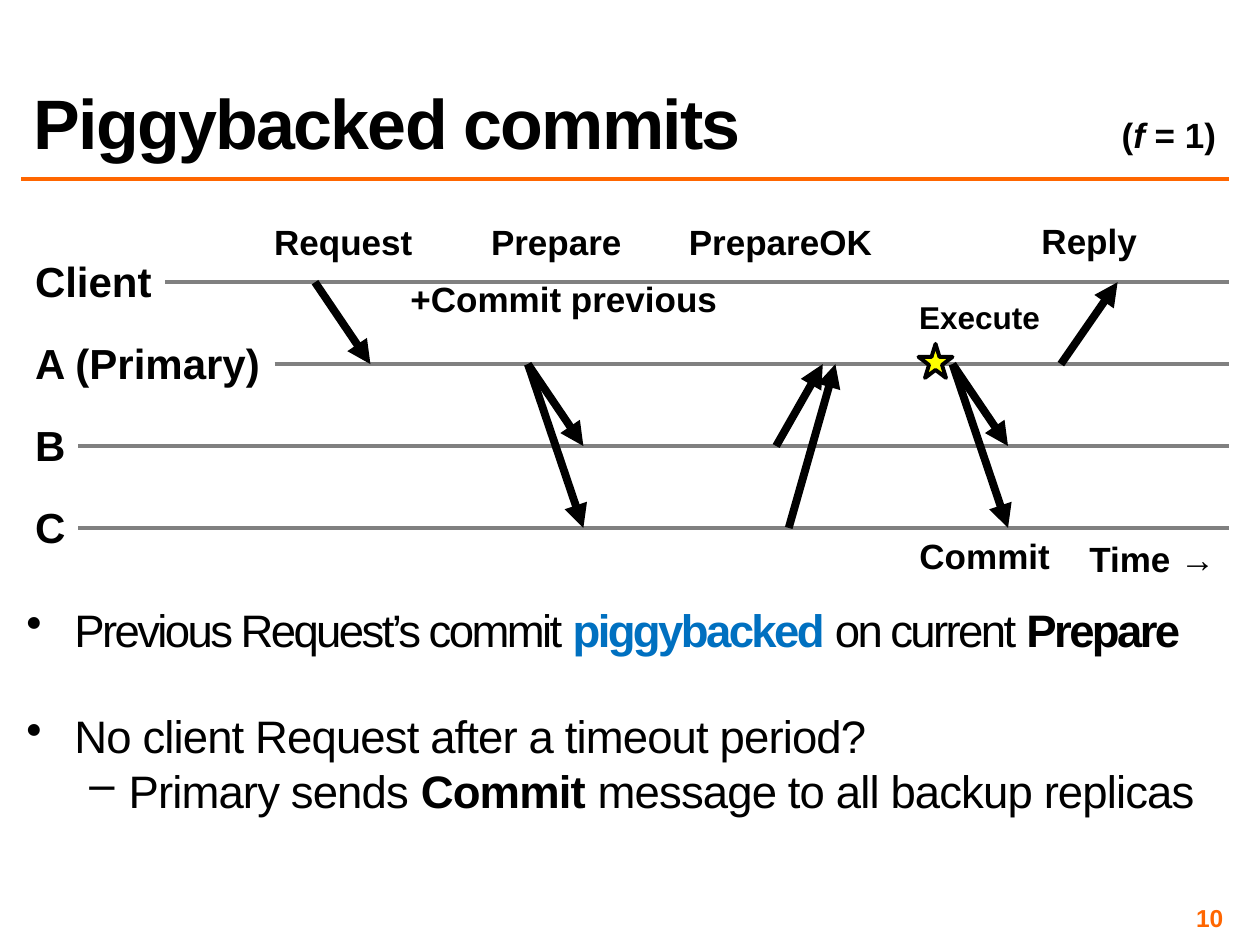
from collections import namedtuple

from pptx import Presentation
from pptx.dml.color import RGBColor
from pptx.enum.shapes import MSO_CONNECTOR as Connector, MSO_SHAPE as Shape
from pptx.enum.text import MSO_ANCHOR as Anchor, PP_ALIGN as Align
from pptx.oxml.xmlchemy import OxmlElement
from pptx.util import Inches, Pt

BLACK = RGBColor(0x00, 0x00, 0x00)
ORANGE = RGBColor(0xFF, 0x66, 0x00)
BLUE = RGBColor(0x00, 0x70, 0xC0)
GRAY = RGBColor(0x80, 0x80, 0x80)
YELLOW = RGBColor(0xFF, 0xFF, 0x00)

Box = namedtuple("Box", "left top width height")
LANE_GAP = 0.65
LANES = [("Client", 1.31), ("A (Primary)", 2.18), ("B", 0.62), ("C", 0.62)]
CLIENT, PRIMARY, B, C = range(4)
ARROWS = [
    (2.5, CLIENT, 2.94, PRIMARY),
    (4.19, PRIMARY, 4.63, B),
    (4.19, PRIMARY, 4.63, C),
    (6.26, C, 6.63, PRIMARY),
    (6.16, B, 6.53, PRIMARY),
    (8.42, PRIMARY, 8.87, CLIENT),
    (7.56, PRIMARY, 8, B),
    (7.56, PRIMARY, 8, C),
]
LABELS = [
    ("Request", Box(2.07, 1.7, 1.31, 0.44), 20),
    ("Prepare", Box(3.79, 1.7, 1.25, 0.44), 20),
    ("PrepareOK", Box(5.36, 1.7, 1.67, 0.44), 20),
    ("Reply", Box(8.16, 1.69, 0.97, 0.44), 20),
    ("+Commit previous", Box(3.15, 2.15, 2.65, 0.44), 20),
    ("Execute", Box(7.19, 2.32, 1.17, 0.4), 18),
    ("Commit", Box(7.19, 4.19, 1.25, 0.44), 20),
    ("Time →", Box(8.54, 4.22, 1.21, 0.44), 20),
]


def add_span(para, text, size=20, color=BLACK, bold=True, italic=False, spacing=0):
    span = para.add_run()
    span.text = text
    font = span.font
    font.name, font.size, font.bold, font.italic = "Arial", Pt(size), bold, italic
    font.color.rgb = color
    if spacing:
        span._r.get_or_add_rPr().set("spc", str(int(spacing * 100)))


def add_frame(page, box, anchor=Anchor.TOP, wrap=False, inset=None):
    frame = page.shapes.add_textbox(*map(Inches, box)).text_frame
    frame.word_wrap = wrap
    frame.vertical_anchor = anchor
    if inset is not None:
        frame.margin_left = frame.margin_right = Inches(inset)
        frame.margin_top = frame.margin_bottom = Inches(inset)
    return frame


def add_label(page, box, text, align=Align.LEFT, **style):
    para = add_frame(page, box).paragraphs[0]
    para.alignment = align
    add_span(para, text, **style)


def add_line(page, start, end, color, width, arrow=False):
    line = page.shapes.add_connector(Connector.STRAIGHT, *map(Inches, start + end))
    line.line.color.rgb = color
    line.line.width = Pt(width)
    if arrow:
        head = OxmlElement("a:tailEnd")
        head.set("type", "triangle")
        line.line._get_or_add_ln().append(head)
    line._element.spPr.append(OxmlElement("a:effectLst"))


def add_bullet(para, mark, indent, hang):
    properties = para._p.get_or_add_pPr()
    properties.set("marL", str(Inches(indent)))
    properties.set("indent", str(-Inches(hang)))
    bullet = OxmlElement("a:buChar")
    bullet.set("char", mark)
    properties.append(bullet)


def build_header(page, box):
    para = add_frame(page, box, Anchor.BOTTOM, wrap=True).paragraphs[0]
    para.line_spacing = 0.8
    add_span(para, "Piggybacked commits", size=40, spacing=-1)
    right = box.left + box.width
    note = add_frame(page, Box(right - 1.03, 0.85, 1.03, 0.44), wrap=True).paragraphs[0]
    note.alignment = Align.RIGHT
    add_span(note, "(")
    add_span(note, "f", italic=True)
    add_span(note, " = 1)")
    rule = box.top + box.height + 0.08
    add_line(page, (box.left, rule), (right, rule), ORANGE, 2)


def build_diagram(page, box):
    def lane_y(lane):
        return box.top + 0.54 + lane * LANE_GAP

    for lane, (name, start) in enumerate(LANES):
        y = lane_y(lane)
        add_label(page, Box(box.left, y - 0.26, start - box.left, 0.5), name, size=24)
        add_line(page, (start, y), (box.left + box.width, y), GRAY, 2.25)
    for x1, source, x2, target in ARROWS:
        add_line(page, (x1, lane_y(source)), (x2, lane_y(target)), BLACK, 4.5, arrow=True)
    for text, place, size in LABELS:
        add_label(page, place, text, Align.CENTER, size=size)

    star = page.shapes.add_shape(
        Shape.STAR_5_POINT, *map(Inches, (7.29, lane_y(PRIMARY) - 0.16, 0.27, 0.27)))
    star.shadow.inherit = False
    star.fill.solid()
    star.fill.fore_color.rgb = YELLOW
    star.line.color.rgb = BLACK
    star.line.width = Pt(2.25)


def build_body(page, box):
    plain, strong = {"bold": False}, {"bold": True}
    bullets = [
        ("•", 0.38, 0.38, 6, -1.5, [
            ("Previous Request’s commit ", plain),
            ("piggybacked ", {"color": BLUE}),
            ("on current ", plain),
            ("Prepare", strong)]),
        ("•", 0.38, 0.38, 36, -0.5, [
            ("No client Request after a timeout period?", plain)]),
        ("–", 0.81, 0.31, 6, -0.5, [
            ("Primary sends ", plain),
            ("Commit", strong),
            (" message to all backup replicas", plain)]),
    ]
    frame = add_frame(page, box, wrap=True, inset=0.04)
    for index, (mark, indent, hang, before, spacing, spans) in enumerate(bullets):
        para = frame.add_paragraph() if index else frame.paragraphs[0]
        para.line_spacing = 0.8
        para.space_before = Pt(before)
        add_bullet(para, mark, indent, hang)
        for text, style in spans:
            add_span(para, text, size=26, spacing=spacing, **style)


def build_page_number(page, box):
    para = add_frame(page, box, Anchor.MIDDLE, wrap=True, inset=0.04).paragraphs[0]
    para.alignment = Align.RIGHT
    add_span(para, "10", size=14, color=ORANGE)


def main():
    deck = Presentation()
    deck.slide_width, deck.slide_height = Inches(10), Inches(7.5)
    page = deck.slides.add_slide(deck.slide_layouts[6])
    build_header(page, Box(0.17, 0.17, 9.58, 1.17))
    build_body(page, Box(0.17, 4.82, 9.58, 2.26))
    build_page_number(page, Box(7.42, 7.17, 2.33, 0.23))
    build_diagram(page, Box(0.18, 1.7, 9.57, 2.96))
    deck.save("out.pptx")


if __name__ == "__main__":
    main()
